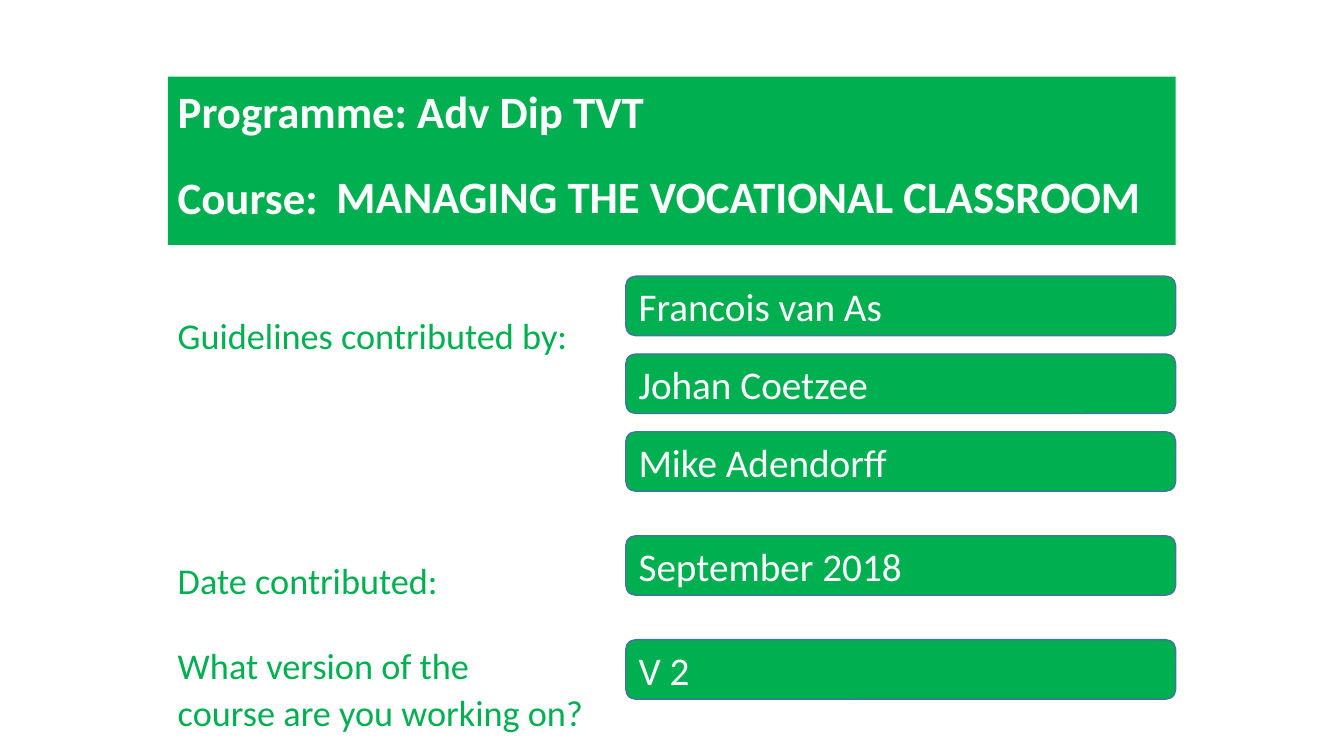
from pptx import Presentation
from pptx.dml.color import RGBColor
from pptx.enum.shapes import MSO_SHAPE
from pptx.enum.text import MSO_ANCHOR, PP_ALIGN
from pptx.util import Cm, Pt

RECTANGLE = MSO_SHAPE.RECTANGLE
ROUNDED = MSO_SHAPE.ROUNDED_RECTANGLE
TOP, MIDDLE, LEFT = MSO_ANCHOR.TOP, MSO_ANCHOR.MIDDLE, PP_ALIGN.LEFT

COLOURS = {"green": "00B050", "white": "FFFFFF", "outline": "43739E"}
FONT = "Calibri"

# Each line of text comes with the space before it, in points.
HEADING = [("Programme: Adv Dip TVT", 0), ("Course:", 23)]
COURSE = [("MANAGING THE VOCATIONAL CLASSROOM", 0)]
LABELS = [
    ("Guidelines contributed by:", 0),
    ("Date contributed:", 144),
    ("What version of the", 29),
    ("course are you working on?", 3),
]
ANSWER_GROUPS = [
    ["Francois van As", "Johan Coetzee", "Mike Adendorff"],
    ["September 2018"],
    ["V 2"],
]

MARGIN, CONTENT_WIDTH = 4.23, 25.4
ANSWER_LEFT, ANSWER_TOP = 15.77, 6.96
ANSWER_HEIGHT, ANSWER_PITCH, GROUP_PITCH = 1.5, 1.96, 2.62


def colour(name):
    return RGBColor.from_string(COLOURS[name])


def write(box, lines, size, ink, bold=False, anchor=TOP, inset_top=0.13):
    frame = box.text_frame
    frame.word_wrap = True
    frame.vertical_anchor = anchor
    frame.margin_top = Cm(inset_top)
    frame.text = "\n".join(text for text, _ in lines)
    for para, (_, space) in zip(frame.paragraphs, lines):
        para.alignment = LEFT
        para.space_before = Pt(space)
        font = para.runs[0].font
        font.name, font.size, font.bold = FONT, Pt(size), bold
        font.color.rgb = colour(ink)


def add_panel(page, kind, left, top, width, height):
    panel = page.shapes.add_shape(kind, Cm(left), Cm(top), Cm(width), Cm(height))
    panel.shadow.inherit = False
    panel.fill.solid()
    panel.fill.fore_color.rgb = colour("green")
    panel.line.fill.background()
    return panel


def add_answer(page, text, top):
    width = MARGIN + CONTENT_WIDTH - ANSWER_LEFT
    answer = add_panel(page, ROUNDED, ANSWER_LEFT, top, width, ANSWER_HEIGHT)
    answer.line.color.rgb = colour("outline")
    answer.line.width = Pt(1)
    write(answer, [(text, 0)], 28, "white", anchor=MIDDLE)


def main():
    deck = Presentation()
    deck.slide_width, deck.slide_height = Cm(33.87), Cm(19.05)
    page = deck.slides.add_slide(deck.slide_layouts[6])

    banner = add_panel(page, RECTANGLE, MARGIN, 1.93, CONTENT_WIDTH, 4.24)
    write(banner, HEADING, 32, "white", bold=True, inset_top=0.17)

    course = page.shapes.add_textbox(Cm(8.23), Cm(4.11), Cm(21.16), Cm(1.63))
    write(course, COURSE, 32, "white", bold=True)

    labels = page.shapes.add_textbox(Cm(MARGIN), Cm(6.55), Cm(11.4), Cm(12.27))
    write(labels, LABELS, 25.9, "green", inset_top=1.35)

    top = ANSWER_TOP
    for group in ANSWER_GROUPS:
        for row, text in enumerate(group):
            add_answer(page, text, top + row * ANSWER_PITCH)
        top += (len(group) - 1) * ANSWER_PITCH + GROUP_PITCH

    deck.save("out.pptx")


if __name__ == "__main__":
    main()
